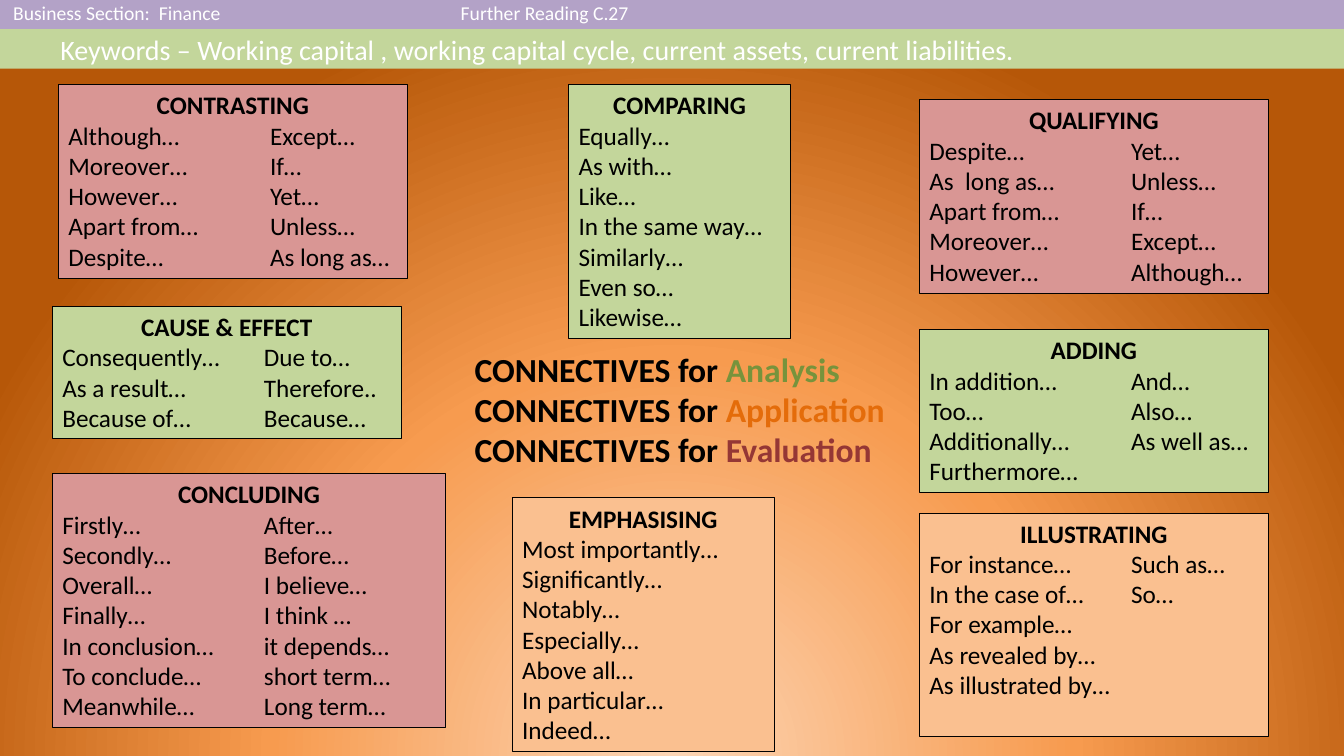
from dataclasses import dataclass

from pptx import Presentation
from pptx.dml.color import RGBColor
from pptx.enum.shapes import MSO_SHAPE as Shape
from pptx.enum.text import MSO_ANCHOR as Anchor, MSO_AUTO_SIZE as AutoSize, PP_ALIGN as Align
from pptx.oxml import parse_xml
from pptx.oxml.ns import nsdecls
from pptx.util import Emu, Pt

EMU_PER_PX = 9144
SLIDE_WIDTH, SLIDE_HEIGHT = 1333, 750
SECOND_COLUMN = 200
PLAIN_TABLE_STYLE = "{2D5ABB26-0587-4C30-8999-92F81FD0307C}"


@dataclass(frozen=True)
class Theme:
    font: str = "Calibri"
    black: str = "000000"
    white: str = "FFFFFF"
    purple: str = "B3A2C7"
    green: str = "C3D69B"
    red: str = "D99694"
    orange: str = "FAC090"
    analysis: str = "77933C"
    application: str = "E46C0A"
    evaluation: str = "953735"
    backdrop: tuple = ((0, "FCD5B5"), (52, "F79B4F"), (100, "B65708"))
    header_size: int = 14
    keywords_size: int = 20
    title_size: int = 24
    body_size: int = 18


THEME = Theme()

HEADER = ("Business Section:  Finance", "Further Reading C.27", "")
HEADER_WIDTHS = (444, 222, 667)
KEYWORDS = "Keywords – Working capital , working capital cycle, current assets, current liabilities."
SKILLS = (("Analysis", THEME.analysis), ("Application", THEME.application),
          ("Evaluation", THEME.evaluation))

# heading, fill, (left, top, width, height), lines of one or two words
CONNECTIVES = (
    ("COMPARING", THEME.green, (564, 84, 220, 252),
     ("Equally…", "As with…", "Like…", "In the same way…", "Similarly…", "Even so…",
      "Likewise…")),
    ("CAUSE & EFFECT", THEME.green, (52, 304, 346, 131),
     ("Consequently…\tDue to…", "As a result…\tTherefore..", "Because of…\tBecause…")),
    ("CONCLUDING", THEME.red, (52, 470, 390, 252),
     ("Firstly…\tAfter…", "Secondly…\tBefore…", "Overall…\tI believe…",
      "Finally…\tI think …", "In conclusion…\tit depends…",
      "To conclude…\tshort term…", "Meanwhile…\tLong term…")),
    ("CONTRASTING", THEME.red, (58, 84, 346, 192),
     ("Although…\tExcept…", "Moreover…\tIf…", "However…\tYet…",
      "Apart from…\tUnless…", "Despite…\tAs long as…")),
    ("EMPHASISING", THEME.orange, (508, 494, 260, 252),
     ("Most importantly…", "Significantly…", "Notably…", "Especially…", "Above all…",
      "In particular…", "Indeed…")),
    ("QUALIFYING", THEME.red, (912, 99, 346, 192),
     ("Despite…\tYet…", "As  long as…\tUnless…", "Apart from…\tIf…",
      "Moreover…\tExcept…", "However…\tAlthough…")),
    ("ADDING", THEME.green, (912, 327, 346, 162),
     ("In addition…\tAnd…", "Too…\tAlso…", "Additionally…\tAs well as…",
      "Furthermore…")),
    ("ILLUSTRATING", THEME.orange, (912, 509, 346, 222),
     ("For instance…\tSuch as…", "In the case of…\tSo…", "For example…",
      "As revealed by…", "As illustrated by…")),
)


def px(length):
    return Emu(length * EMU_PER_PX)


def place(*lengths):
    return [px(length) for length in lengths]


def rgb(colour):
    return RGBColor.from_string(colour)


def style(font, size, colour=None, bold=False):
    font.name, font.size, font.bold = THEME.font, Pt(size), bold
    if colour:
        font.color.rgb = rgb(colour)


def paint_background(slide):
    """Radial gradient that shines from below the slide."""
    slide.background.fill.gradient()
    gradient = slide._element.xpath("./p:cSld/p:bg//a:gradFill")[0]
    stops = "".join(
        f'<a:gs pos="{position * 1000}"><a:srgbClr val="{colour}"/></a:gs>'
        for position, colour in THEME.backdrop)
    radial = parse_xml(
        f'<a:gradFill {nsdecls("a")} rotWithShape="1"><a:gsLst>{stops}</a:gsLst>'
        '<a:path path="circle"><a:fillToRect l="50000" t="130000" r="50000" b="-30000"/>'
        '</a:path></a:gradFill>')
    gradient.getparent().replace(gradient, radial)


def add_header(slide):
    frame = slide.shapes.add_table(2, len(HEADER), *place(0, -3, SLIDE_WIDTH, 62))
    table = frame.table
    table.first_row = table.horz_banding = False
    table._tbl.xpath("./a:tblPr/a:tableStyleId")[0].text = PLAIN_TABLE_STYLE
    for column, width in zip(table.columns, HEADER_WIDTHS):
        column.width = px(width)
    for cell, text in zip(table.iter_cells(), HEADER + ("",) * len(HEADER)):
        cell.fill.solid()
        cell.fill.fore_color.rgb = rgb(THEME.purple)
        cell.vertical_anchor = Anchor.MIDDLE
        cell.margin_left = cell.margin_right = px(13)
        cell.margin_top = cell.margin_bottom = px(5 if text else 0)
        paragraph = cell.text_frame.paragraphs[0]
        if text:
            paragraph.text = text
        style(paragraph.font, THEME.header_size, THEME.white)


def add_rectangle(slide, box, fill):
    shape = slide.shapes.add_shape(Shape.RECTANGLE, *place(*box))
    shape.shadow.inherit = False
    shape.fill.solid()
    shape.fill.fore_color.rgb = rgb(fill)
    shape.line.fill.background()
    shape.text_frame.word_wrap = True
    return shape


def add_keywords(slide):
    shape = add_rectangle(slide, (0, 29, SLIDE_WIDTH, 39), THEME.green)
    shape.text_frame.vertical_anchor = Anchor.MIDDLE
    paragraph = shape.text_frame.paragraphs[0]
    paragraph.text = KEYWORDS
    paragraph.alignment = Align.LEFT
    paragraph._p.get_or_add_pPr().set("indent", str(px(50)))
    style(paragraph.font, THEME.keywords_size, THEME.white)


def add_title(slide):
    text_box = slide.shapes.add_textbox(*place(461, 341, 431, 131))
    frame = text_box.text_frame
    frame.word_wrap = False
    frame.auto_size = AutoSize.SHAPE_TO_FIT_TEXT
    for index, (skill, colour) in enumerate(SKILLS):
        paragraph = frame.add_paragraph() if index else frame.paragraphs[0]
        style(paragraph.font, THEME.title_size, bold=True)
        for text, run_colour in (("CONNECTIVES for ", THEME.black), (skill, colour)):
            run = paragraph.add_run()
            run.text = text
            run.font.color.rgb = rgb(run_colour)


def add_tab_stop(paragraph, position):
    paragraph._p.get_or_add_pPr().append(parse_xml(
        f'<a:tabLst {nsdecls("a")}><a:tab pos="{px(position)}" algn="l"/></a:tabLst>'))


def add_connectives(slide, heading, fill, box, lines):
    shape = add_rectangle(slide, box, fill)
    shape.line.color.rgb = rgb(THEME.black)
    shape.line.width = Pt(0.75)
    frame = shape.text_frame
    frame.vertical_anchor = Anchor.TOP
    title = frame.paragraphs[0]
    title.text = heading
    title.alignment = Align.CENTER
    style(title.font, THEME.body_size, THEME.black, bold=True)
    for line in lines:
        paragraph = frame.add_paragraph()
        paragraph.text = line
        paragraph.alignment = Align.LEFT
        if "\t" in line:
            add_tab_stop(paragraph, SECOND_COLUMN)
        style(paragraph.font, THEME.body_size, THEME.black)


def main():
    presentation = Presentation()
    presentation.slide_width, presentation.slide_height = place(SLIDE_WIDTH, SLIDE_HEIGHT)
    slide = presentation.slides.add_slide(presentation.slide_layouts[6])
    paint_background(slide)
    add_header(slide)
    add_keywords(slide)
    add_title(slide)
    for group in CONNECTIVES:
        add_connectives(slide, *group)
    presentation.save("out.pptx")


if __name__ == "__main__":
    main()
